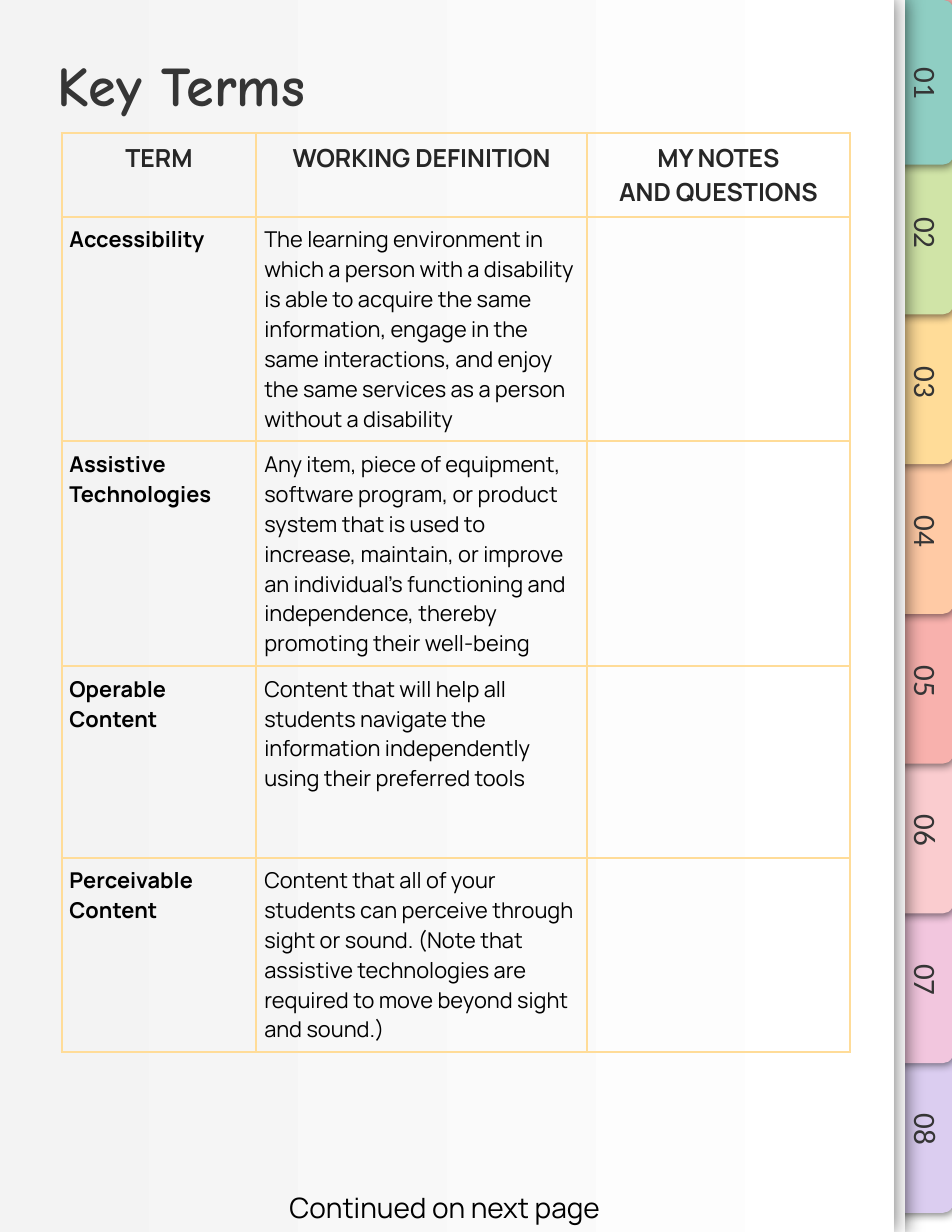
from lxml.etree import SubElement
from pptx import Presentation
from pptx.dml.color import RGBColor
from pptx.enum.shapes import MSO_SHAPE as SHAPE
from pptx.enum.text import MSO_ANCHOR as ANCHOR, MSO_AUTO_SIZE as AUTO, PP_ALIGN as ALIGN
from pptx.oxml.ns import qn
from pptx.util import Inches, Pt

# Content
TITLE = "Key Terms"
FOOTER = "Continued on next page"
HEADER = ["TERM", "WORKING DEFINITION", "MY NOTES\nAND QUESTIONS"]
TERMS = [
    ("Accessibility",
     "The learning environment in which a person with a disability is able to acquire "
     "the same information, engage in the same interactions, and enjoy the same "
     "services as a person without a disability"),
    ("Assistive Technologies",
     "Any item, piece of equipment, software program, or product system that is used "
     "to increase, maintain, or improve an individual’s functioning and independence, "
     "thereby promoting their well-being"),
    ("Operable Content",
     "Content that will help all students navigate the information independently "
     "using their preferred tools"),
    ("Perceivable Content",
     "Content that all of your students can perceive through sight or sound. (Note that "
     "assistive technologies are required to move beyond sight and sound.)"),
]
TABS = ["8FCEC3", "D0E4A7", "FFDC98", "FFCAA5", "F8B1AD", "FACCCF", "F2C6DE", "DBCDF0"]

# Theme and grid
THEME = {
    "title": dict(name="Comic Neue", size=Pt(36), bold=True, color="353535"),
    "tab": dict(name="Calibri", size=Pt(20), bold=False, color="353535"),
    "header": dict(name="Manrope", size=Pt(16), bold=True, color="262626"),
    "term": dict(name="Manrope", size=Pt(14), bold=True, color="000000"),
    "body": dict(name="Manrope", size=Pt(14), bold=False, color="000000"),
    "footer": dict(name="Manrope", size=Pt(18), bold=False, color="000000"),
    "back": "F8B1AD", "paper": "FFFFFF", "paper_edge": "F3F3F3", "border": "FFDC98",
}
W, H = 8.5, 11
PAGE_W = 7.98
COLS = [1.74, 2.95, 2.35]
ROWS = [0.65, 1.59, 1.71, 1.71, 1.71]
TAB_SHADOW = (5.6, 1.5, 61)
PAGE_SHADOW = (12.4, 0.8, 0)


def rgb(value):
    return RGBColor.from_string(value)


def box(*lengths):
    return [Inches(n) for n in lengths]


def write(tf, text, style, align=ALIGN.LEFT, inset=0.1, anchor=None):
    for side in ("left", "top", "right", "bottom"):
        setattr(tf, f"margin_{side}", Inches(inset))
    if anchor is not None:
        tf.vertical_anchor = anchor
    tf.word_wrap = True
    tf.text = text
    for p in tf.paragraphs:
        p.alignment = align
        for r in p.runs:
            for key, value in THEME[style].items():
                if key == "color":
                    r.font.color.rgb = rgb(value)
                else:
                    setattr(r.font, key, value)


def add_shadow(sp, blur, dist, angle):
    sp.shadow.inherit = False
    effects = sp.element.spPr.find(qn("a:effectLst"))
    outer = SubElement(effects, qn("a:outerShdw"), blurRad=str(Pt(blur)), dist=str(Pt(dist)),
                       dir=str(angle * 60000), algn="ctr", rotWithShape="0")
    color = SubElement(outer, qn("a:srgbClr"), val="000000")
    SubElement(color, qn("a:alpha"), val="50000")


def add_panel(s, kind, place, fill, shadow=None):
    sp = s.shapes.add_shape(kind, *box(*place))
    sp.fill.solid()
    sp.fill.fore_color.rgb = rgb(fill)
    sp.line.fill.background()
    sp.shadow.inherit = False
    if shadow:
        add_shadow(sp, *shadow)
    return sp


def add_borders(cell):
    tc_pr = cell._tc.get_or_add_tcPr()
    for i, side in enumerate(("lnL", "lnR", "lnT", "lnB")):
        ln = SubElement(tc_pr, qn(f"a:{side}"), w=str(Pt(1.5)))
        fill = SubElement(ln, qn("a:solidFill"))
        SubElement(fill, qn("a:srgbClr"), val=THEME["border"])
        tc_pr.remove(ln)
        tc_pr.insert(i, ln)


def add_notebook(s):
    add_panel(s, SHAPE.RECTANGLE, (8.08, 8.58, 0.42, 2.42), THEME["paper"])
    # Later tabs lie under earlier ones
    for i, color in reversed(list(enumerate(TABS))):
        tab = add_panel(s, SHAPE.ROUND_2_SAME_RECTANGLE,
                        (7.51, 0.47 + 1.337 * i, 1.47, 0.53), color, TAB_SHADOW)
        tab.rotation = 90
    add_panel(s, SHAPE.RECTANGLE, (0.1, 0, PAGE_W, H), THEME["paper"], PAGE_SHADOW)
    page = add_panel(s, SHAPE.RECTANGLE, (0, 0, PAGE_W, H), THEME["paper"], PAGE_SHADOW)
    page.fill.gradient()
    page.fill.gradient_angle = 0
    for stop, at, color in zip(page.fill.gradient_stops, (0, 1),
                               (THEME["paper_edge"], THEME["paper"])):
        stop.position = at
        stop.color.rgb = rgb(color)
    for i in range(len(TABS)):
        label = s.shapes.add_textbox(*box(7.6, 0.43 + 1.334 * i, 1.44, 0.63))
        label.rotation = 90
        write(label.text_frame, f"{i + 1:02}", "tab", ALIGN.CENTER, anchor=ANCHOR.BOTTOM)


def add_title(s):
    title = s.shapes.title
    title.left, title.top, title.width, title.height = box(0.41, 0.35, 7.12, 0.63)
    write(title.text_frame, TITLE, "title", anchor=ANCHOR.TOP)
    title.text_frame.auto_size = AUTO.NONE
    s.shapes._spTree.append(title.element)  # bring in front of the page


def add_terms(s):
    rows = [HEADER] + [[*term, ""] for term in TERMS]
    frame = s.shapes.add_table(len(rows), len(COLS), *box(0.55, 1.19, sum(COLS), sum(ROWS)))
    table = frame.table
    table.first_row = table.horz_banding = False
    for col, width in zip(table.columns, COLS):
        col.width = Inches(width)
    for i, (row, texts) in enumerate(zip(table.rows, rows)):
        row.height = Inches(ROWS[i])
        for j, (cell, text) in enumerate(zip(row.cells, texts)):
            style = "header" if i == 0 else "term" if j == 0 else "body"
            write(cell.text_frame, text, style, ALIGN.CENTER if i == 0 else ALIGN.LEFT)
            for side in ("left", "top", "right", "bottom"):
                setattr(cell, f"margin_{side}", Inches(0.07))
            cell.fill.background()
            add_borders(cell)


def main():
    prs = Presentation()
    prs.slide_width, prs.slide_height = box(W, H)
    s = prs.slides.add_slide(prs.slide_layouts[5])
    s.background.fill.solid()
    s.background.fill.fore_color.rgb = rgb(THEME["back"])
    add_notebook(s)
    add_title(s)
    add_terms(s)
    footer = s.shapes.add_textbox(*box(2.19, 10.53, 3.56, 0.5))
    write(footer.text_frame, FOOTER, "footer", ALIGN.CENTER)
    footer.text_frame.auto_size = AUTO.SHAPE_TO_FIT_TEXT
    prs.save("out.pptx")


if __name__ == "__main__":
    main()
